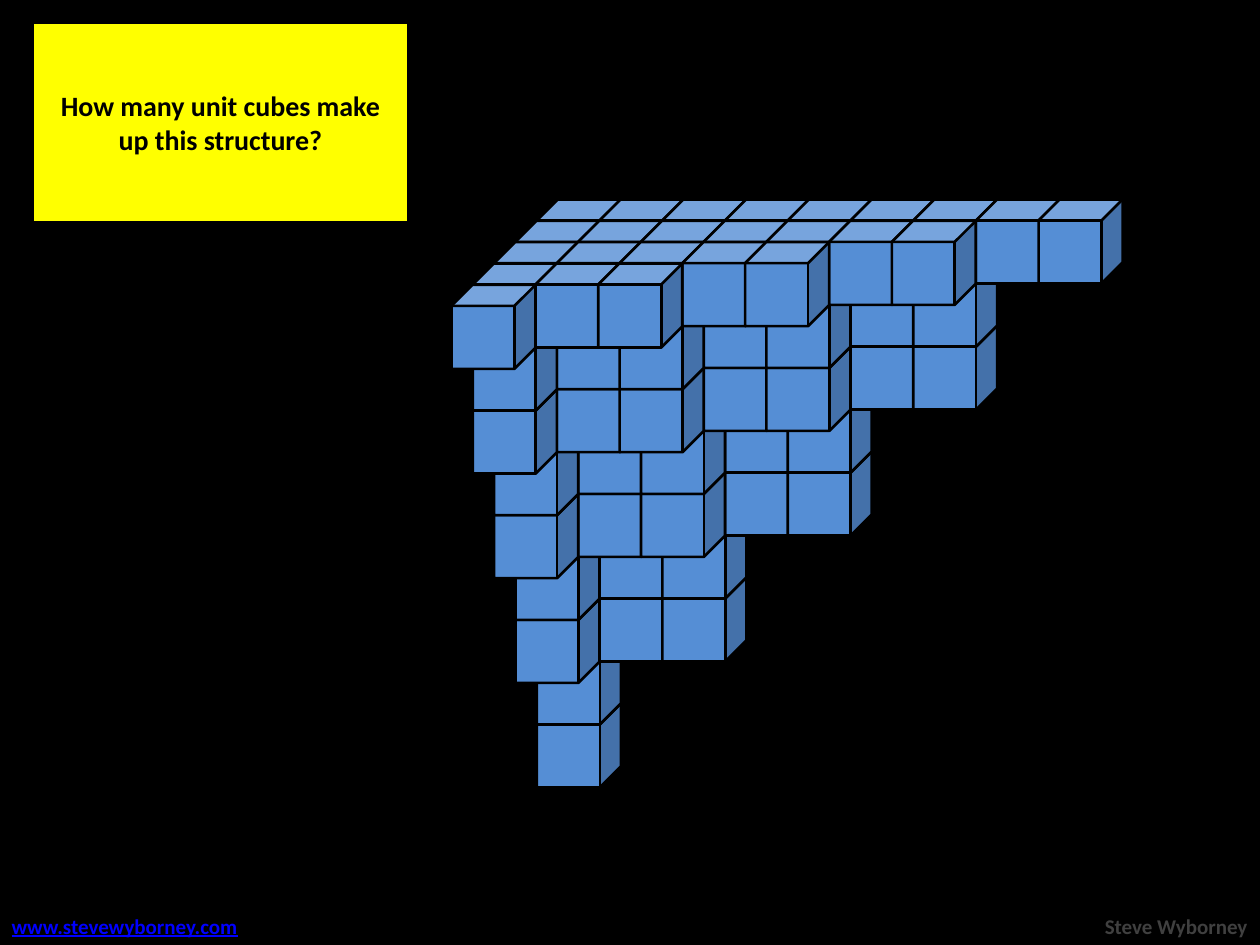
import pptx
import pptx.util
import pptx.dml.color
import pptx.enum.shapes
import pptx.enum.text

Pt = pptx.util.Pt
ALIGN = pptx.enum.text.PP_ALIGN
SHAPE = pptx.enum.shapes.MSO_SHAPE
HUES = {"back": "000000", "card": "FFFF00", "cube": "558ED5",
        "link": "0000FF", "name": "404040"}


def tint(name):
    """Return the named colour."""
    return pptx.dml.color.RGBColor.from_string(HUES[name])


def write(shape, text, hue, align, **form):
    """Write one bold paragraph into a shape."""
    para = shape.text_frame.paragraphs[0]
    para.alignment = align
    run = para.add_run()
    run.text = text
    for key, value in {"name": "Calibri", "bold": True, **form}.items():
        setattr(run.font, key, value)
    run.font.color.rgb = tint(hue)


def block(shapes, kind, box, fill, line):
    """Add a filled preset shape with a dark outline."""
    shape = shapes.add_shape(kind, *map(Pt, box))
    shape.shadow.inherit = False
    shape.fill.solid()
    shape.fill.fore_color.rgb = tint(fill)
    shape.line.color.rgb = tint("back")
    shape.line.width = Pt(line)
    return shape


def card(slide, box):
    """Place the question card."""
    shape = block(slide.shapes, SHAPE.RECTANGLE, box, "card", 2)
    shape.text_frame.vertical_anchor = pptx.enum.text.MSO_ANCHOR.MIDDLE
    write(shape, "How many unit cubes make up this structure?", "back",
          ALIGN.CENTER, size=Pt(16))


def stack(slide, box, count=9):
    """Stack cubes in rows from back to front, two lower per step."""
    left, top, width, height = box
    side = 48
    depth = side / 4
    rows = (count + 1) // 2
    shift = depth + 0.2
    back = left + (rows - 1) * shift
    pitch = (left + width - side - back) / (count - 1)
    rise = (top + height - side - top) / (count - 1)
    group = slide.shapes.add_group_shape()
    for row in range(rows):
        for level in reversed(range(count - 2 * row)):
            for col in range(count - 2 * row - level):
                if level < count - 2 * row - 2 * ((col + 1) // 2):
                    spot = (back - row * shift + col * pitch,
                            top + row * shift + level * rise, side, side)
                    block(group.shapes, SHAPE.CUBE, spot, "cube", 1.5)


def label(slide, box, text, hue, align, **form):
    """Place one footer label."""
    shape = slide.shapes.add_textbox(*map(Pt, box))
    shape.text_frame.word_wrap = False
    write(shape, text, hue, align, size=Pt(12), **form)


def foot(slide, box):
    """Place the web address and the name at the two ends of a box."""
    left, top, width, height = box
    label(slide, (left, top, 147.5, height), "www.stevewyborney.com",
          "link", ALIGN.LEFT, underline=True)
    label(slide, (left + width - 96.5, top, 96.5, height), "Steve Wyborney",
          "name", ALIGN.RIGHT)


def main():
    """Build and save the slide."""
    deck = pptx.Presentation()
    deck.slide_width, deck.slide_height = Pt(720), Pt(540)
    slide = deck.slides.add_slide(deck.slide_layouts[6])
    slide.background.fill.solid()
    slide.background.fill.fore_color.rgb = tint("back")
    foot(slide, (-0.5, 518.2, 720.5, 21.8))
    card(slide, (18.5, 12.5, 215, 115))
    stack(slide, (258, 114, 383.5, 336))
    deck.save("out.pptx")


if __name__ == "__main__":
    main()
